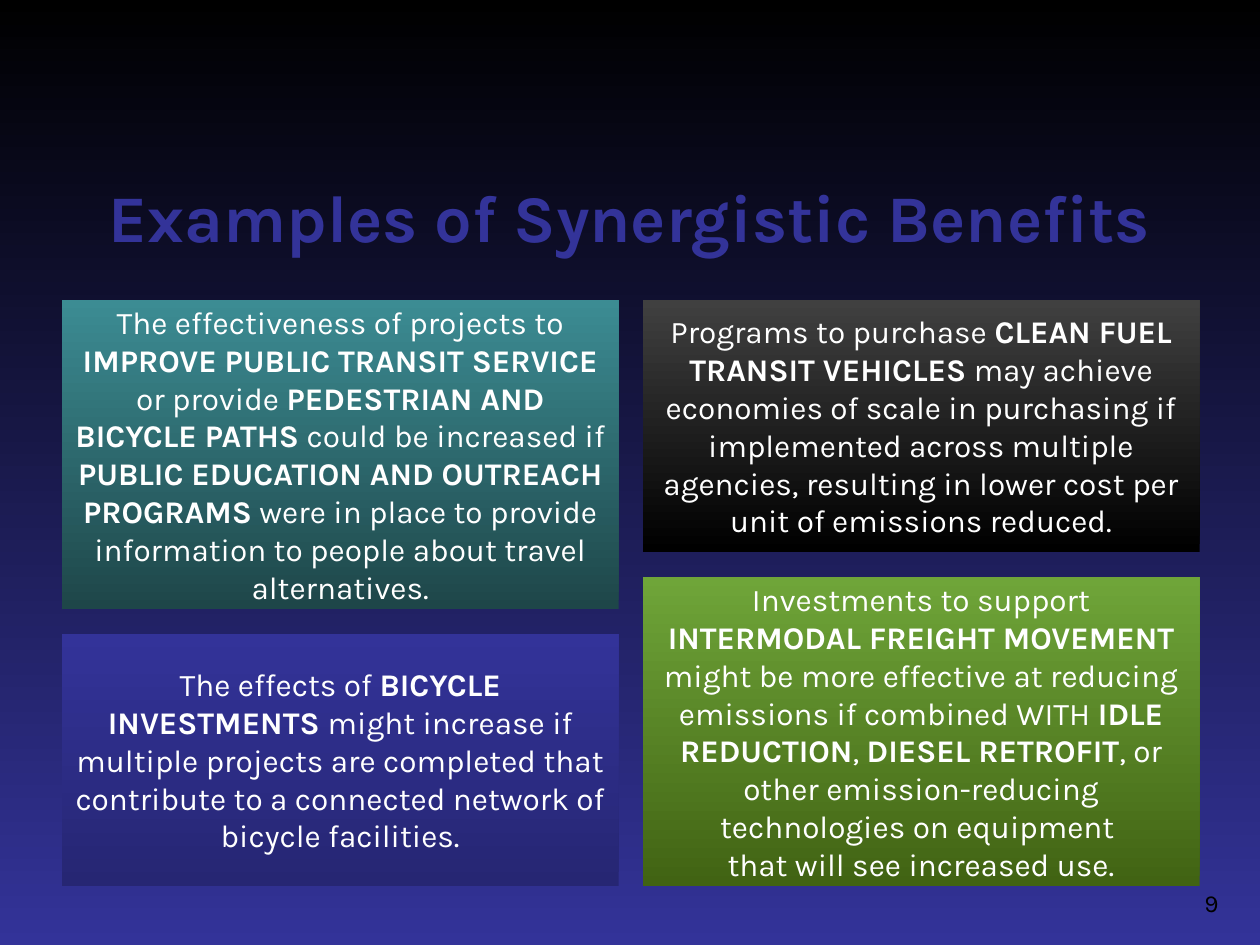
from dataclasses import dataclass

from pptx import Presentation
from pptx.dml.color import RGBColor
from pptx.dml.fill import FillFormat
from pptx.enum.shapes import MSO_SHAPE as Shape
from pptx.enum.text import MSO_ANCHOR as Anchor, MSO_AUTO_SIZE as AutoSize, PP_ALIGN as Align
from pptx.slide import Slide
from pptx.util import Inches, Pt


@dataclass(frozen=True)
class Theme:
    font: str = "Karla"
    title: str = "333399"
    text: str = "FFFFFF"
    number: str = "000000"
    background: tuple = ("000000", "333399")
    teal: tuple = ("1E4649", "3C8C93")
    green: tuple = ("416313", "6FA539")
    blue: tuple = ("262673", "333399")
    charcoal: tuple = ("000000", "404040")
    title_size: int = 38
    body_size: int = 18
    number_size: int = 14


@dataclass(frozen=True)
class Card:
    text: str
    height: float
    colors: tuple


THEME = Theme()
TOP, CARD_WIDTH, GAP = 2.38, 4.42, 0.2
COLUMNS = {
    0.49: (
        Card("The effectiveness of projects to *IMPROVE PUBLIC TRANSIT SERVICE* or provide "
             "*PEDESTRIAN AND BICYCLE PATHS* could be increased if *PUBLIC EDUCATION AND "
             "OUTREACH PROGRAMS* were in place to provide information to people about travel "
             "alternatives.", 2.45, THEME.teal),
        Card("The effects of *BICYCLE INVESTMENTS *might increase if multiple projects are "
             "completed that contribute to a connected network of bicycle facilities.",
             2, THEME.blue),
    ),
    5.1: (
        Card("Programs to purchase *CLEAN FUEL TRANSIT VEHICLES* may achieve economies of "
             "scale in purchasing if implemented across multiple agencies, resulting in lower "
             "cost per unit of emissions reduced.", 2, THEME.charcoal),
        Card("Investments to support *INTERMODAL FREIGHT MOVEMENT *might be more effective at "
             "reducing emissions if combined WITH *IDLE REDUCTION*, *DIESEL RETROFIT*, or other "
             "emission-reducing technologies on equipment \nthat will see increased use.",
             2.45, THEME.green),
    ),
}


def set_gradient(fill: FillFormat, colors: tuple, angle: float) -> None:
    """Fill with two colours, the angle running counter-clockwise."""
    fill.gradient()
    fill.gradient_angle = angle
    for position, (stop, color) in enumerate(zip(fill.gradient_stops, colors)):
        stop.position = position
        stop.color.rgb = RGBColor.from_string(color)


def style(p, size: int, color: str, align: Align) -> None:
    """Set the alignment and font of a paragraph."""
    p.alignment = align
    p.font.name = THEME.font
    p.font.size = Pt(size)
    p.font.color.rgb = RGBColor.from_string(color)


def add_marked_text(p, text: str) -> None:
    """Add runs, bold between asterisks, with line breaks at newlines."""
    for i, part in enumerate(text.split("*")):
        for j, line in enumerate(part.split("\n")):
            if j:
                p.add_line_break()
            r = p.add_run()
            r.text = line
            r.font.bold = i % 2 == 1


def add_title(s: Slide) -> None:
    """Place and format the title placeholder."""
    sp = s.shapes.title
    sp.left, sp.top, sp.width, sp.height = map(Inches, (0, 1.19, 10, 1.05))
    tf = sp.text_frame
    tf.text = "Examples of Synergistic Benefits"
    tf.vertical_anchor = Anchor.MIDDLE
    tf.auto_size = AutoSize.NONE
    p = tf.paragraphs[0]
    style(p, THEME.title_size, THEME.title, Align.CENTER)
    p.font.bold = True


def add_number(s: Slide) -> None:
    """Add the page number at the lower right."""
    sp = s.shapes.add_textbox(*map(Inches, (7.44, 7, 2.33, 0.52)))
    tf = sp.text_frame
    tf.word_wrap = True
    tf.text = "9"
    style(tf.paragraphs[0], THEME.number_size, THEME.number, Align.RIGHT)


def add_card(s: Slide, card: Card, left: float, top: float) -> None:
    """Add one gradient card with centred text."""
    sp = s.shapes.add_shape(Shape.ROUNDED_RECTANGLE,
                            *map(Inches, (left, top, CARD_WIDTH, card.height)))
    sp.adjustments[0] = 0
    sp.shadow.inherit = False
    sp.line.fill.background()
    set_gradient(sp.fill, card.colors, 90)
    tf = sp.text_frame
    tf.word_wrap = True
    tf.vertical_anchor = Anchor.MIDDLE
    p = tf.paragraphs[0]
    style(p, THEME.body_size, THEME.text, Align.CENTER)
    add_marked_text(p, card.text)


def main() -> None:
    """Build and save the slide."""
    prs = Presentation()
    prs.slide_width, prs.slide_height = Inches(10), Inches(7.5)
    s = prs.slides.add_slide(prs.slide_layouts[5])
    set_gradient(s.background.fill, THEME.background, 270)
    add_title(s)
    add_number(s)
    for left, cards in COLUMNS.items():
        top = TOP
        for card in cards:
            add_card(s, card, left, top)
            top += card.height + GAP
    prs.save("out.pptx")


if __name__ == "__main__":
    main()
